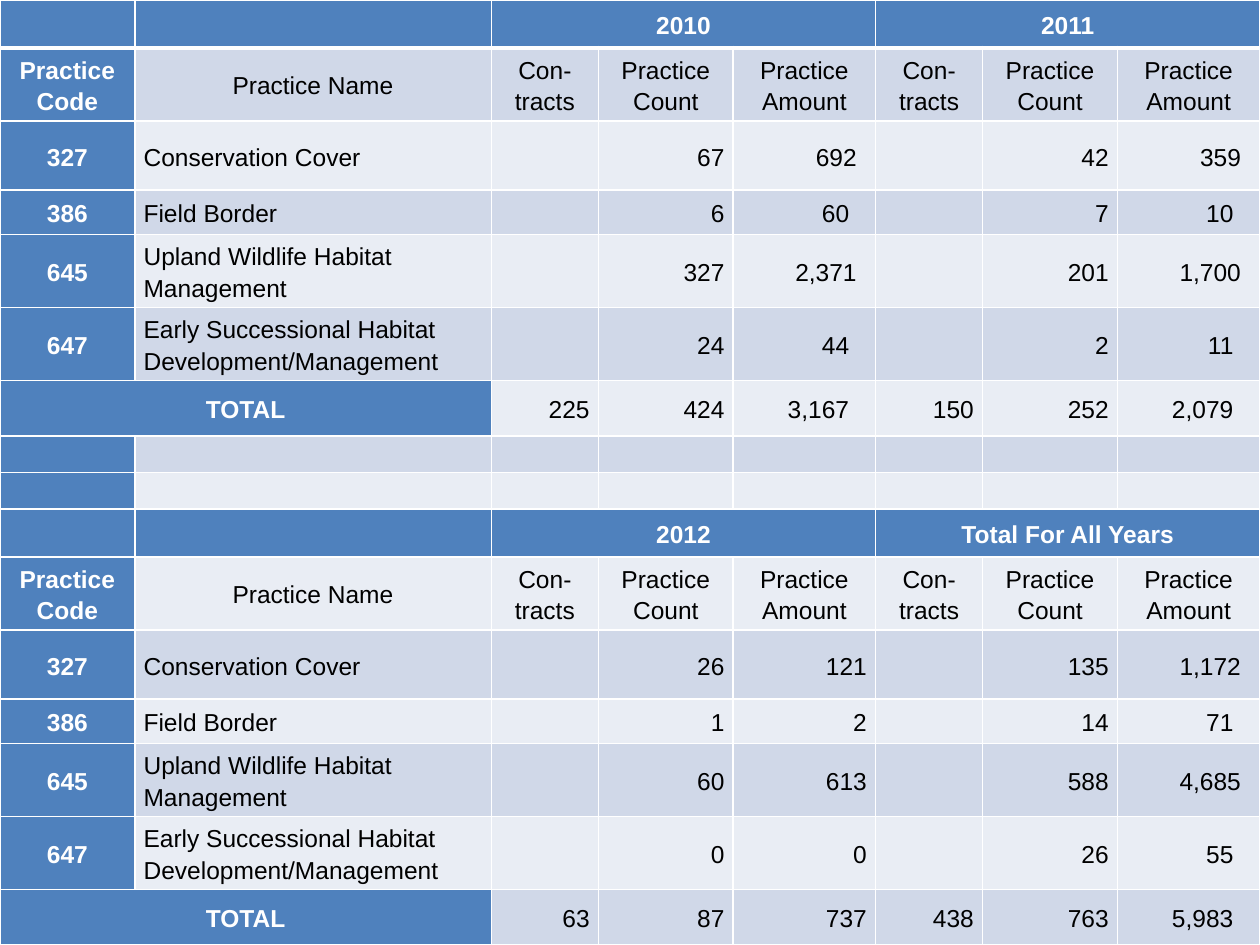
from lxml import etree
from pptx import Presentation
from pptx import util as u
from pptx.dml.color import RGBColor
from pptx.enum.text import MSO_ANCHOR, PP_ALIGN
from pptx.oxml import parse_xml
from pptx.oxml.ns import nsdecls, qn

BLUE = RGBColor(0x4F, 0x81, 0xBD)
BAND_DARK = RGBColor(0xD0, 0xD8, 0xE8)
BAND_LIGHT = RGBColor(0xE9, 0xED, 0xF4)
WHITE = RGBColor(0xFF, 0xFF, 0xFF)
BLACK = RGBColor(0, 0, 0)
GRAY = RGBColor(0x80, 0x80, 0x80)
SILVER = RGBColor(0xE6, 0xE6, 0xE6)
SLATE = RGBColor(0x7D, 0x84, 0x96)

COLS = [1.07, 2.83, 0.85, 1.07, 1.13, 0.85, 1.07, 1.13]
BLOCK_ROWS = [0.38, 0.58, 0.55, 0.35, 0.58, 0.58, 0.44]
GAP_ROWS = [0.29, 0.29]
ROWS = BLOCK_ROWS + GAP_ROWS + BLOCK_ROWS

MEASURES = ["Con-tracts", "Practice Count", "Practice Amount"]
PRACTICES = [
    ("327", "Conservation Cover"),
    ("386", "Field Border"),
    ("645", "Upland Wildlife Habitat Management"),
    ("647", "Early Successional Habitat Development/Management"),
]
# Each block: period names, then (count, amount) pairs per practice, then totals
BLOCKS = [
    (["2010", "2011"],
     [["67", "692", "42", "359"], ["6", "60", "7", "10"],
      ["327", "2,371", "201", "1,700"], ["24", "44", "2", "11"]],
     ["225", "424", "3,167", "150", "252", "2,079"]),
    (["2012", "Total For All Years"],
     [["26", "121", "135", "1,172"], ["1", "2", "14", "71"],
      ["60", "613", "588", "4,685"], ["0", "0", "26", "55"]],
     ["63", "87", "737", "438", "763", "5,983"]),
]


class PracticeSlide:
    font, size, spacing, inset = "Arial", 14, 1.15, 0.07

    def __init__(self, prs):
        self.s = prs.slides.add_slide(prs.slide_layouts[6])

    def background(self, stops):
        gs = "".join(f'<a:gs pos="{pos * 1000}"><a:srgbClr val="{color}"/></a:gs>'
                     for pos, color in stops)
        fill = self.s.background.fill
        fill.gradient()
        grad = self.s.element.find(".//" + qn("a:gradFill"))
        grad.replace(grad.find(qn("a:gsLst")),
                     parse_xml(f'<a:gsLst {nsdecls("a")}>{gs}</a:gsLst>'))
        fill.gradient_angle = 270

    def table(self, cols, rows):
        frame = self.s.shapes.add_table(len(rows), len(cols), 0, 0,
                                        u.Inches(sum(cols)), u.Inches(sum(rows)))
        self.tbl = frame.table
        for col, width in zip(self.tbl.columns, cols):
            col.width = u.Inches(width)
        for row, height in zip(self.tbl.rows, rows):
            row.height = u.Inches(height)
        for r in range(len(rows)):
            for c in range(len(cols)):
                self.blank(r, c)

    def blank(self, r, c):
        cell = self.tbl.cell(r, c)
        self.fill(cell, BLUE if c == 0 else (BAND_DARK if r % 2 else BAND_LIGHT))
        cell.margin_left = cell.margin_right = u.Inches(self.inset)
        cell.margin_top = cell.margin_bottom = 0
        cell.vertical_anchor = MSO_ANCHOR.MIDDLE
        p = cell.text_frame.paragraphs[0]
        etree.SubElement(p._p, qn("a:endParaRPr"), sz=str(self.size * 100))
        # The rule below the top header is heavier
        heavy = {(0, "B"), (1, "T")}
        for i, side in enumerate("LRTB"):
            width = u.Pt(3 if (r, side) in heavy else 1)
            cell._tc.tcPr.insert(i, parse_xml(
                f'<a:ln{side} {nsdecls("a")} w="{width}"><a:solidFill>'
                f'<a:srgbClr val="{WHITE}"/></a:solidFill></a:ln{side}>'))

    def fill(self, cell, color):
        cell.fill.solid()
        cell.fill.fore_color.rgb = color

    def label(self, r, c, text, align=PP_ALIGN.CENTER, head=False, span=1, indent=0):
        cell = self.tbl.cell(r, c)
        if span > 1:
            cell.merge(self.tbl.cell(r, c + span - 1))
        if head:
            self.fill(cell, BLUE)
        cell.margin_right = u.Inches(self.inset + indent)
        p = cell.text_frame.paragraphs[0]
        p.text = text
        p.alignment = align
        p.line_spacing = self.spacing
        font = p.runs[0].font
        font.name, font.size, font.bold = self.font, u.Pt(self.size), head
        font.color.rgb = WHITE if head else BLACK

    def amount(self, r, c, text, total=False):
        """Amounts sit in from the right edge, except in the 2012 column."""
        indent = 0.14 if total or len(text) < 3 else 0.08
        in_2012 = r > len(BLOCK_ROWS) and c == 4
        self.label(r, c, text, PP_ALIGN.RIGHT, indent=0 if in_2012 else indent)

    def block(self, top, periods, values, totals):
        # Period headers and column headings
        for c in (0, 1):
            self.fill(self.tbl.cell(top, c), BLUE)
        self.label(top + 1, 0, "Practice Code", head=True)
        self.label(top + 1, 1, "Practice Name")
        for i, period in enumerate(periods):
            first = 2 + 3 * i
            self.label(top, first, period, head=True, span=3)
            for c, measure in enumerate(MEASURES, first):
                self.label(top + 1, c, measure)

        # Practices
        for r, ((code, name), nums) in enumerate(zip(PRACTICES, values), top + 2):
            self.label(r, 0, code, head=True)
            self.label(r, 1, name, PP_ALIGN.LEFT)
            for i in (0, 1):
                count, amount = nums[2 * i:2 * i + 2]
                self.label(r, 3 + 3 * i, count, PP_ALIGN.RIGHT)
                self.amount(r, 4 + 3 * i, amount)

        # Totals
        last = top + len(BLOCK_ROWS) - 1
        self.label(last, 0, "TOTAL", head=True, span=2)
        for c, num in enumerate(totals, 2):
            if c in (4, 7):
                self.amount(last, c, num, total=True)
            else:
                self.label(last, c, num, PP_ALIGN.RIGHT)


def main():
    prs = Presentation()
    prs.slide_width, prs.slide_height = u.Inches(10), u.Inches(7.5)
    slide = PracticeSlide(prs)
    slide.background([(0, GRAY), (7, SILVER), (32, SLATE),
                      (47, SILVER), (85, SLATE), (100, SILVER)])
    slide.table(COLS, ROWS)
    for i, block in enumerate(BLOCKS):
        slide.block(i * (len(BLOCK_ROWS) + len(GAP_ROWS)), *block)
    prs.save("out.pptx")


if __name__ == "__main__":
    main()
